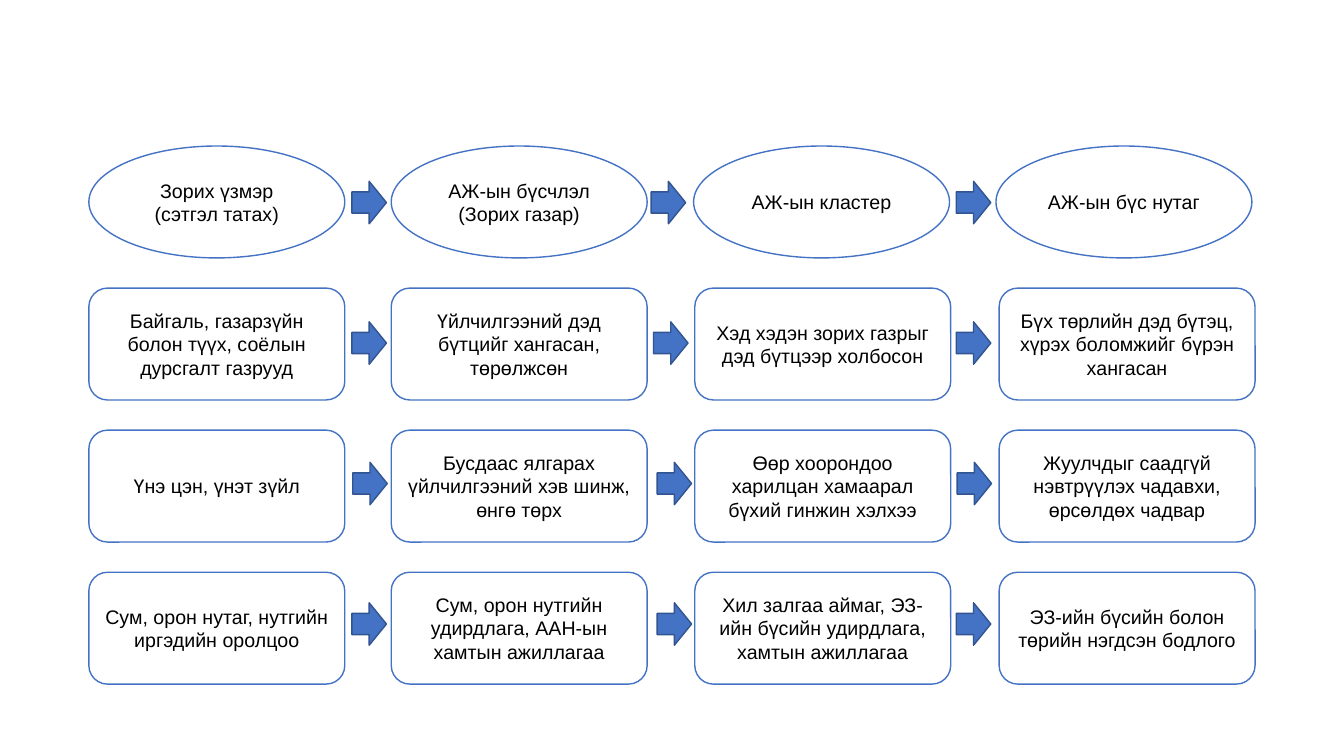
from pptx import Presentation
from pptx.dml.color import RGBColor
from pptx.enum.shapes import MSO_SHAPE as Kind
from pptx.enum.text import MSO_ANCHOR as Anchor, PP_ALIGN as Align
from pptx.util import Cm, Pt

BLUE = RGBColor(0x44, 0x72, 0xC4)
NAVY = RGBColor(0x32, 0x54, 0x91)
WHITE = RGBColor(0xFF, 0xFF, 0xFF)
BLACK = RGBColor(0x00, 0x00, 0x00)

# Each row: texts of the four stages, left to right
ROWS = [
    ["Зорих үзмэр (сэтгэл татах)",
     "АЖ-ын бүсчлэл\n(Зорих газар)",
     "АЖ-ын кластер",
     "АЖ-ын бүс нутаг"],
    ["Байгаль, газарзүйн болон түүх, соёлын дурсгалт газрууд",
     "Үйлчилгээний дэд бүтцийг хангасан, төрөлжсөн",
     "Хэд хэдэн зорих газрыг дэд бүтцээр холбосон",
     "Бүх төрлийн дэд бүтэц, хүрэх боломжийг бүрэн хангасан"],
    ["Үнэ цэн, үнэт зүйл",
     "Бусдаас ялгарах үйлчилгээний хэв шинж, өнгө төрх",
     "Өөр хоорондоо харилцан хамаарал бүхий гинжин хэлхээ",
     "Жуулчдыг саадгүй нэвтрүүлэх чадавхи, өрсөлдөх чадвар"],
    ["Сум, орон нутаг, нутгийн иргэдийн оролцоо",
     "Сум, орон нутгийн удирдлага, ААН-ын хамтын ажиллагаа",
     "Хил залгаа аймаг, ЭЗ-ийн бүсийн удирдлага, хамтын ажиллагаа",
     "ЭЗ-ийн бүсийн болон төрийн нэгдсэн бодлого"],
]

# Left edges in cm
OVALS = [2.24, 9.86, 17.48, 25.1]
BOXES = [2.24, 9.86, 17.51, 25.18]
ARROWS = [
    [8.87, 16.41, 24.1],
    [8.87, 16.47, 24.1],
    [8.89, 16.56, 24.12],
    [8.87, 16.56, 24.1],
]

deck = Presentation()
deck.slide_width, deck.slide_height = Cm(33.87), Cm(19.05)
slide = deck.slides.add_slide(deck.slide_layouts[6])


def draw(kind, x, y, w, h, fill, line):
    shape = slide.shapes.add_shape(kind, Cm(x), Cm(y), Cm(w), Cm(h))
    shape.shadow.inherit = False
    shape.fill.solid()
    shape.fill.fore_color.rgb = fill
    shape.line.color.rgb = line
    shape.line.width = Pt(1)
    return shape


# Stages: ovals head the columns, rounded boxes below
for row, texts in enumerate(ROWS):
    kind = Kind.ROUNDED_RECTANGLE if row else Kind.OVAL
    for x, text in zip(BOXES if row else OVALS, texts):
        stage = draw(kind, x, 3.68 + 3.58 * row, 6.45, 2.82, WHITE, BLUE)
        frame = stage.text_frame
        frame.text = text
        frame.word_wrap = True
        frame.vertical_anchor = Anchor.MIDDLE
        for para in frame.paragraphs:
            para.alignment = Align.CENTER
            for run in para.runs:
                run.font.name = "Arial"
                run.font.size = Pt(14)
                run.font.color.rgb = BLACK

# Arrows between neighbouring stages
for row, edges in enumerate(ARROWS):
    for x in edges:
        draw(Kind.RIGHT_ARROW, x, 4.57 + 3.54 * row, 0.87, 1.07, BLUE, NAVY)

deck.save("out.pptx")
